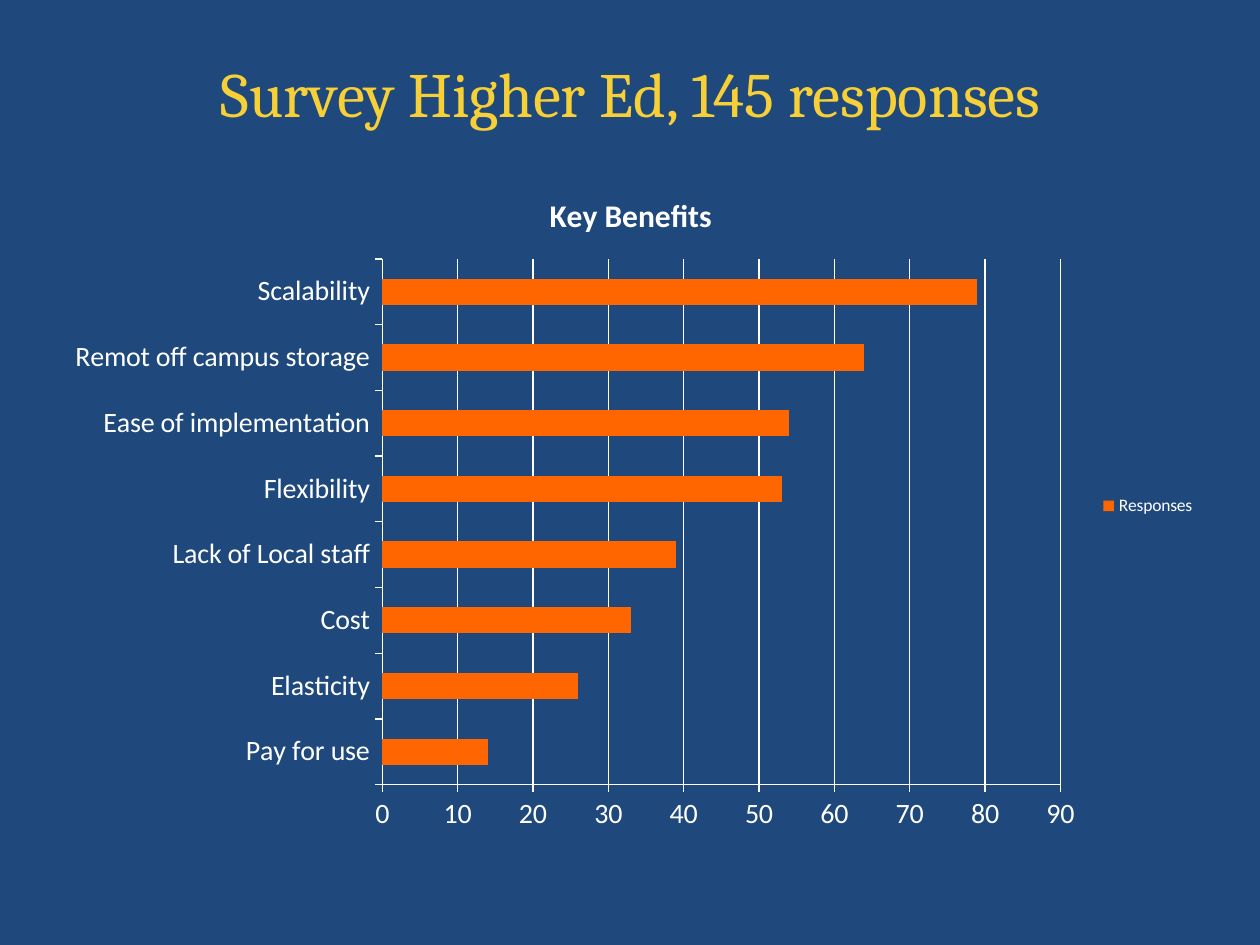
from pptx import Presentation
from pptx.chart.data import CategoryChartData
from pptx.dml.color import RGBColor as RGB
from pptx.enum.chart import XL_CHART_TYPE as ChartType
from pptx.enum.chart import XL_LEGEND_POSITION as LegendPos
from pptx.enum.chart import XL_TICK_MARK as Tick
from pptx.enum.text import MSO_ANCHOR as Anchor
from pptx.enum.text import PP_ALIGN as Align
from pptx.oxml import parse_xml
from pptx.oxml.ns import nsdecls
from pptx.util import Cm, Pt

# Content
TITLE = "Survey Higher Ed, 145 responses"
CHART_TITLE = "Key Benefits"
SERIES = "Responses"
BENEFITS = [  # from the bottom bar to the top one
    ("Pay for use", 14),
    ("Elasticity", 26),
    ("Cost", 33),
    ("Lack of Local staff", 39),
    ("Flexibility", 53),
    ("Ease of implementation", 54),
    ("Remot off campus storage", 64),
    ("Scalability", 79),
]

THEME = {
    "back": RGB(0x1F, 0x49, 0x7D),
    "title": RGB(0xF6, 0xD0, 0x36),
    "text": RGB(0xFF, 0xFF, 0xFF),
    "bar": RGB(0xFF, 0x66, 0x00),
    "title_font": "Cambria",
    "chart_font": "Calibri",
    "title_size": Pt(36),
    "chart_title_size": Pt(18),
    "axis_size": Pt(16),
    "legend_size": Pt(10),
}

# Geometry: title and chart share one column
LEFT, WIDTH = Cm(1.07), Cm(23.29)
TITLE_TOP, TITLE_HEIGHT = Cm(0.76), Cm(2.21)
CHART_TOP, CHART_HEIGHT = Cm(3.38), Cm(13.64)
PLOT = {"x": 0.285, "y": 0.135, "w": 0.587, "h": 0.777}  # shares of the chart


def style(font, size, color=THEME["text"], name=THEME["chart_font"], bold=False):
    font.size, font.name, font.bold = size, name, bold
    font.color.rgb = color


def place_plot(chart):
    """Fix the inner plot area inside the chart."""
    sizes = "".join(f'<c:{key} val="{val}"/>' for key, val in PLOT.items())
    area = chart.plots[0]._element.getparent()
    for old in area.findall("{*}layout"):
        area.remove(old)
    area.insert(0, parse_xml(
        f'<c:layout {nsdecls("c")}><c:manualLayout><c:layoutTarget val="inner"/>'
        f'<c:xMode val="edge"/><c:yMode val="edge"/>{sizes}'
        f'</c:manualLayout></c:layout>'))


def add_title(s):
    sp = s.shapes.title
    sp.left, sp.top, sp.width, sp.height = LEFT, TITLE_TOP, WIDTH, TITLE_HEIGHT
    tf = sp.text_frame
    tf.word_wrap = True
    tf.vertical_anchor = Anchor.MIDDLE
    p = tf.paragraphs[0]
    p.alignment = Align.CENTER
    r = p.add_run()
    r.text = TITLE
    style(r.font, THEME["title_size"], THEME["title"], THEME["title_font"])


def add_benefits_chart(s):
    data = CategoryChartData()
    data.categories = [name for name, _ in BENEFITS]
    data.add_series(SERIES, [count for _, count in BENEFITS])
    chart = s.shapes.add_chart(ChartType.BAR_CLUSTERED, LEFT, CHART_TOP,
                               WIDTH, CHART_HEIGHT, data).chart
    style(chart.font, THEME["legend_size"])

    # Heading and legend
    chart.has_title = True
    r = chart.chart_title.text_frame.paragraphs[0].add_run()
    r.text = CHART_TITLE
    style(r.font, THEME["chart_title_size"], bold=True)
    chart.has_legend = True
    chart.legend.position = LegendPos.RIGHT
    chart.legend.include_in_layout = False
    style(chart.legend.font, THEME["legend_size"])

    # Axes
    for axis in (chart.category_axis, chart.value_axis):
        axis.major_tick_mark, axis.minor_tick_mark = Tick.OUTSIDE, Tick.NONE
        axis.format.line.color.rgb = THEME["text"]
        axis.format.line.width = Pt(0.75)
        style(axis.tick_labels.font, THEME["axis_size"])
    values = chart.value_axis
    values.minimum_scale, values.maximum_scale, values.major_unit = 0, 90, 10
    values.has_major_gridlines = True
    values.major_gridlines.format.line.color.rgb = THEME["text"]
    values.major_gridlines.format.line.width = Pt(0.75)

    # Bars
    plot = chart.plots[0]
    plot.gap_width = 150
    plot.vary_by_categories = False
    fill = plot.series[0].format.fill
    fill.solid()
    fill.fore_color.rgb = THEME["bar"]
    place_plot(chart)


def main():
    prs = Presentation()
    prs.slide_width, prs.slide_height = Cm(25.4), Cm(19.05)
    s = prs.slides.add_slide(prs.slide_layouts[5])
    s.background.fill.solid()
    s.background.fill.fore_color.rgb = THEME["back"]
    add_title(s)
    add_benefits_chart(s)
    prs.save("out.pptx")


if __name__ == "__main__":
    main()
